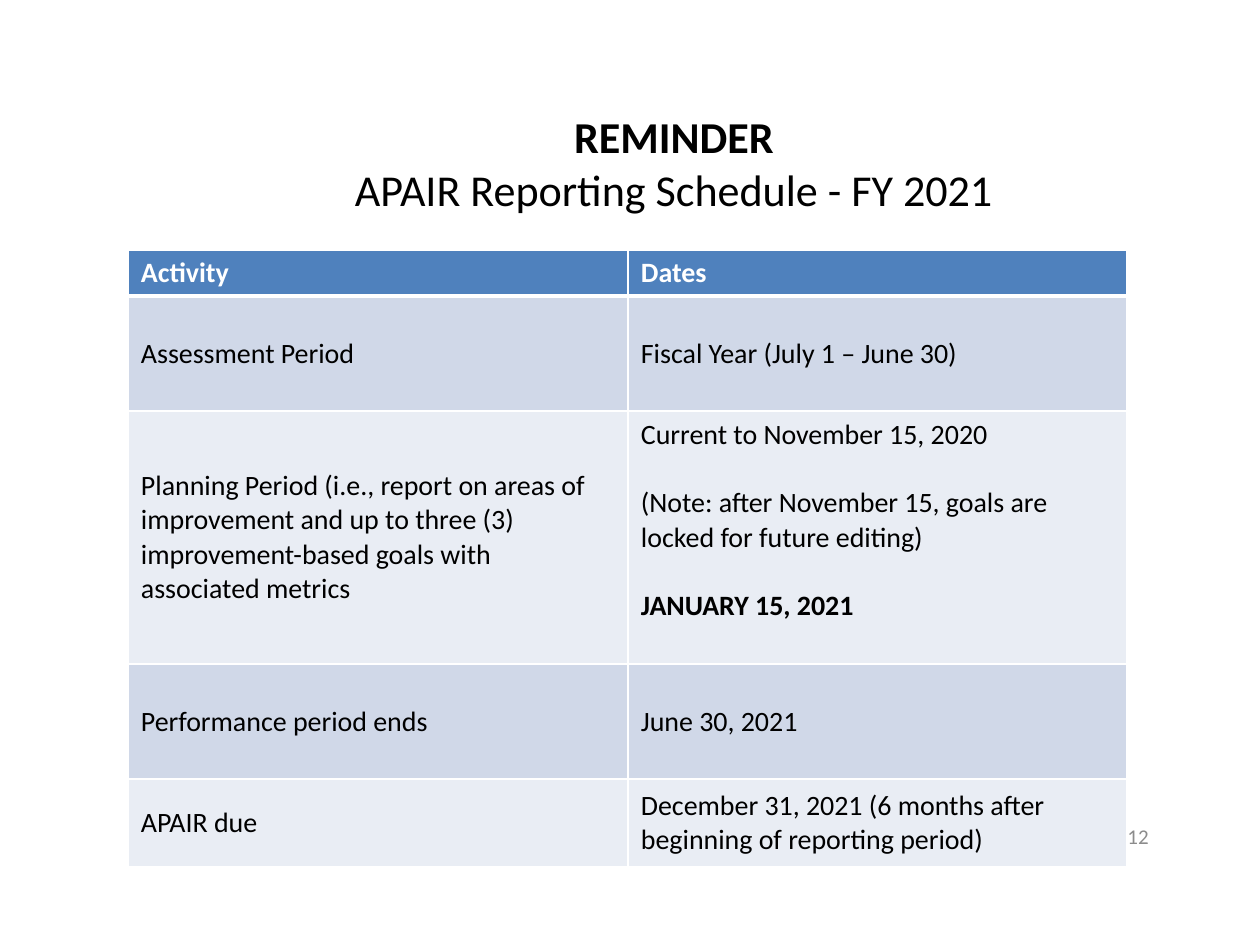
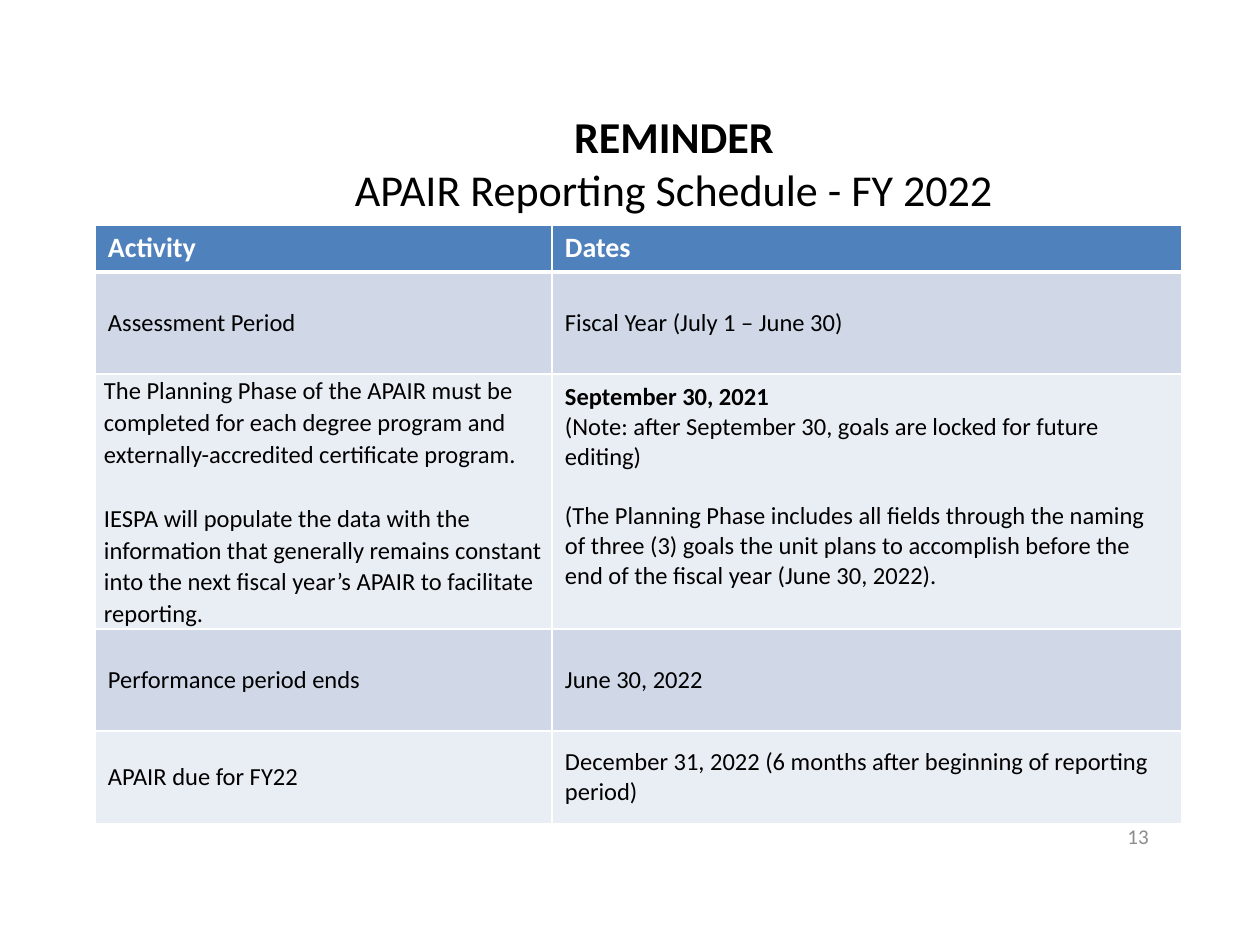
from dataclasses import dataclass

from lxml import etree
from pptx import Presentation
from pptx.dml.color import RGBColor
from pptx.enum.text import MSO_ANCHOR, MSO_AUTO_SIZE, PP_ALIGN
from pptx.oxml.ns import qn
from pptx.util import Emu, Pt

MIDDLE = MSO_ANCHOR.MIDDLE
TOP = MSO_ANCHOR.TOP
CENTER = PP_ALIGN.CENTER
RIGHT = PP_ALIGN.RIGHT
NO_AUTOFIT = MSO_AUTO_SIZE.NONE

EMU_PER_INCH = 914400
PX_PER_INCH = 126
TITLE_ONLY = 5
LINE_HEIGHT = 1.22


@dataclass(frozen=True)
class Theme:
    font: str = "Calibri"
    text: str = "000000"
    light_text: str = "FFFFFF"
    muted: str = "8C8C8C"
    header: str = "4F81BD"
    bands: tuple = ("D0D8E8", "E9EDF4")
    rule: str = "FFFFFF"
    title_size: float = 25.2
    header_size: int = 16
    number_size: int = 12
    thin_rule: int = 1
    thick_rule: int = 3


@dataclass(frozen=True)
class Line:
    text: str
    bold: bool = False
    gap: bool = False


@dataclass(frozen=True)
class CellText:
    lines: tuple
    spacing: float = 1.0
    anchor: int = MIDDLE
    side_margin: int = 13
    top_margin: int = 6
    bottom_margin: int = 6


@dataclass(frozen=True)
class Schedule:
    year: int
    number: int
    left: int
    top: int
    columns: tuple
    heights: tuple
    body_size: int
    rows: tuple


def px(value):
    return Emu(round(value * EMU_PER_INCH / PX_PER_INCH))


def plain(text):
    return CellText((Line(text),))


class Deck:
    def __init__(self, theme):
        self.theme = theme
        self.presentation = Presentation()
        self.presentation.slide_width = px(1260)
        self.presentation.slide_height = px(945)
        self.slide = None

    def add_slide(self):
        layout = self.presentation.slide_layouts[TITLE_ONLY]
        self.slide = self.presentation.slides.add_slide(layout)

    def style(self, run, size, color, bold=False):
        run.font.name = self.theme.font
        run.font.size = Pt(size)
        run.font.bold = bold
        run.font.color.rgb = RGBColor.from_string(color)

    def title(self, heading, subject):
        title = self.slide.shapes.title
        title.left, title.top, title.width, title.height = map(px, (128, 100, 1092, 125))
        frame = title.text_frame
        frame.text = f"{heading}\v{subject}"
        frame.auto_size = NO_AUTOFIT
        frame.word_wrap = True
        frame.vertical_anchor = MIDDLE
        paragraph = frame.paragraphs[0]
        paragraph.alignment = CENTER
        for run in paragraph.runs:
            self.style(run, self.theme.title_size, self.theme.text, run.text == heading)

    def page_number(self, number):
        box = self.slide.shapes.add_textbox(*map(px, (867, 811, 294, 50)))
        frame = box.text_frame
        frame.text = str(number)
        frame.word_wrap = True
        frame.vertical_anchor = MIDDLE
        paragraph = frame.paragraphs[0]
        paragraph.alignment = RIGHT
        self.style(paragraph.runs[0], self.theme.number_size, self.theme.muted)

    def borders(self, cell, top, bottom):
        properties = cell._tc.get_or_add_tcPr()
        thin = self.theme.thin_rule
        for side, width in (("L", thin), ("R", thin), ("T", top), ("B", bottom)):
            line = etree.SubElement(properties, qn(f"a:ln{side}"), w=str(Pt(width)))
            fill = etree.SubElement(line, qn("a:solidFill"))
            etree.SubElement(fill, qn("a:srgbClr"), val=self.theme.rule)

    def fill_cell(self, cell, content, size, color, background):
        cell.fill.solid()
        cell.fill.fore_color.rgb = RGBColor.from_string(background)
        cell.vertical_anchor = content.anchor
        cell.margin_left = cell.margin_right = px(content.side_margin)
        cell.margin_top = px(content.top_margin)
        cell.margin_bottom = px(content.bottom_margin)
        frame = cell.text_frame
        frame.text = "\n".join(line.text for line in content.lines)
        for paragraph, line in zip(frame.paragraphs, content.lines):
            paragraph.line_spacing = content.spacing
            if line.gap:
                paragraph.space_before = Pt(round(size * LINE_HEIGHT * content.spacing, 1))
            self.style(paragraph.runs[0], size, color, line.bold)

    def table(self, schedule):
        theme = self.theme
        header = tuple(
            CellText((Line(text, bold=True),), anchor=TOP) for text in ("Activity", "Dates")
        )
        rows = (header, *schedule.rows)
        frame = self.slide.shapes.add_table(
            len(rows), len(header), px(schedule.left), px(schedule.top),
            px(sum(schedule.columns)), px(sum(schedule.heights)),
        )
        table = frame.table
        for column, width in zip(table.columns, schedule.columns):
            column.width = px(width)
        for index, (contents, height) in enumerate(zip(rows, schedule.heights)):
            table.rows[index].height = px(height)
            if index == 0:
                look = theme.header_size, theme.light_text, theme.header
            else:
                band = theme.bands[(index - 1) % len(theme.bands)]
                look = schedule.body_size, theme.text, band
            top = theme.thick_rule if index == 1 else theme.thin_rule
            bottom = theme.thick_rule if index == 0 else theme.thin_rule
            for cell, content in zip(table.rows[index].cells, contents):
                self.borders(cell, top, bottom)
                self.fill_cell(cell, content, *look)

    def schedule_slide(self, schedule):
        self.add_slide()
        self.title("REMINDER", f"APAIR Reporting Schedule - FY {schedule.year}")
        self.page_number(schedule.number)
        self.table(schedule)

    def save(self):
        self.presentation.save("out.pptx")


def schedule_rows(year, planning, due_label):
    return (
        (plain("Assessment Period"), plain("Fiscal Year (July 1 – June 30)")),
        planning,
        (plain("Performance period ends"), plain(f"June 30, {year}")),
        (
            plain(due_label),
            plain(f"December 31, {year} (6 months after beginning of reporting period)"),
        ),
    )


PLANNING_2021 = (
    plain(
        "Planning Period (i.e., report on areas of improvement and up to three (3) "
        "improvement-based goals with associated metrics"
    ),
    CellText(
        (
            Line("Current to November 15, 2020"),
            Line("(Note: after November 15, goals are locked for future editing)", gap=True),
            Line("JANUARY 15, 2021", bold=True, gap=True),
        ),
        bottom_margin=40,
    ),
)

PLANNING_2022 = (
    CellText(
        (
            Line(
                "The Planning Phase of the APAIR must be completed for each degree program "
                "and externally-accredited certificate program."
            ),
            Line(
                "IESPA will populate the data with the information that generally remains "
                "constant into the next fiscal year’s APAIR to facilitate reporting.",
                gap=True,
            ),
        ),
        spacing=1.07, anchor=TOP, side_margin=9, top_margin=0, bottom_margin=0,
    ),
    CellText(
        (
            Line("September 30, 2021", bold=True),
            Line("(Note: after September 30, goals are locked for future editing)"),
            Line(
                "(The Planning Phase includes all fields through the naming of three (3) "
                "goals the unit plans to accomplish before the end of the fiscal year "
                "(June 30, 2022).",
                gap=True,
            ),
        ),
        bottom_margin=36,
    ),
)

SCHEDULES = (
    Schedule(
        year=2021, number=12, left=128, top=250, columns=(500, 499),
        heights=(46, 115, 253, 115, 88), body_size=16,
        rows=schedule_rows(2021, PLANNING_2021, "APAIR due"),
    ),
    Schedule(
        year=2022, number=13, left=95, top=225, columns=(457, 630),
        heights=(47, 102, 255, 102, 93), body_size=14,
        rows=schedule_rows(2022, PLANNING_2022, "APAIR due for FY22"),
    ),
)


def main():
    deck = Deck(Theme())
    for schedule in SCHEDULES:
        deck.schedule_slide(schedule)
    deck.save()


if __name__ == "__main__":
    main()
